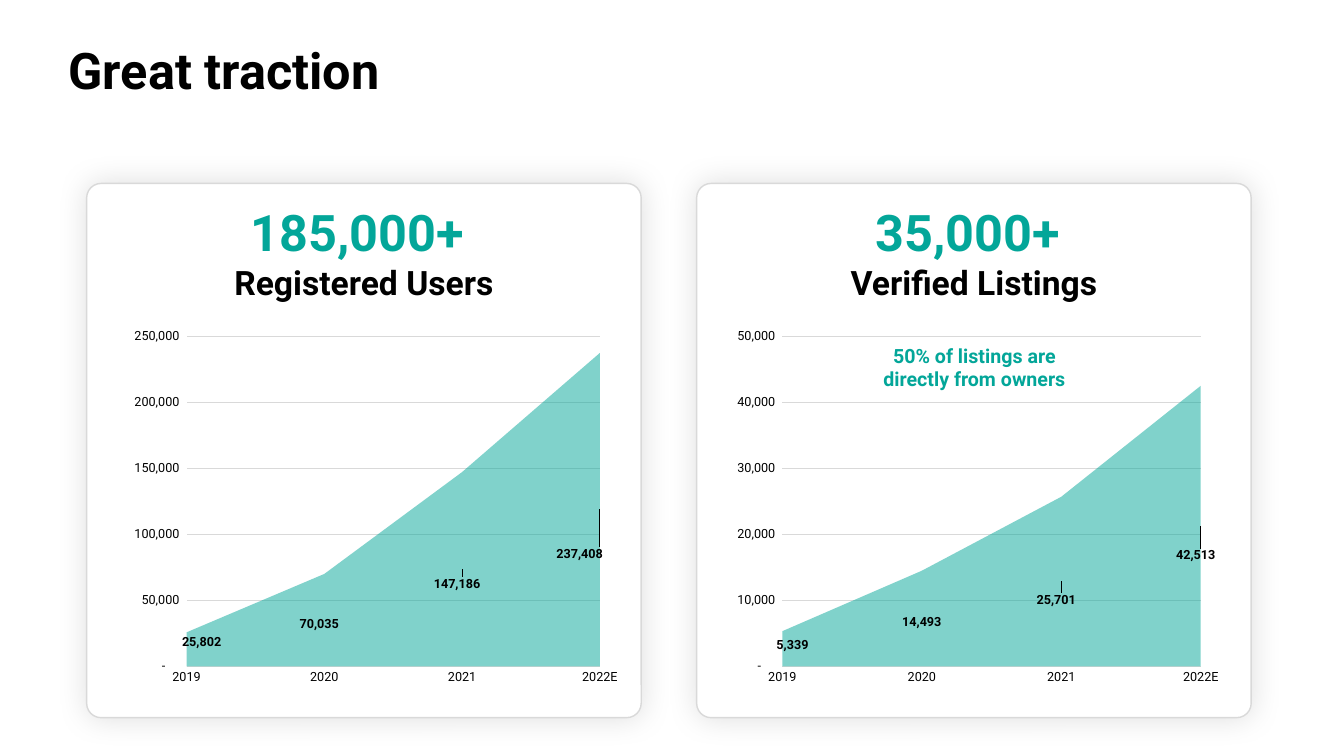
from lxml import etree
from pptx import Presentation
from pptx import util as u
from pptx.chart.data import CategoryChartData
from pptx.dml.color import RGBColor
from pptx.enum import chart as ch, shapes, text
from pptx.oxml import parse_xml
from pptx.oxml.ns import nsdecls, qn

FONT = "Roboto"
BLACK = RGBColor(0, 0, 0)
WHITE = RGBColor(255, 255, 255)
GREY = RGBColor(0xD9, 0xD9, 0xD9)
TEAL = RGBColor(0x03, 0xA6, 0x99)
COUNT = '_(* #,##0_);_(* \\(#,##0\\);_(* "-"??_);_('
YEARS = ("2019", "2020", "2021", "2022E")

# Two columns share one grid, in inches
LEFT, STEP, TOP = 0.86, 6.05, 1.82
CARD_W, CARD_H = 5.5, 5.3

# Per card: headline, label, values, axis top, axis step,
# plot left and width, label shifts (shares of the chart)
CARDS = (
    ("185,000+ ", "Registered Users", (25802, 70035, 147186, 237408),
     250000, 50000, 0.13, 0.82,
     ((0.03, -0.02), (-0.01, 0.01), (-0.01, 0.04), (-0.04, 0.12))),
    ("35,000+ ", "Verified Listings", (5339, 14493, 25701, 42513),
     50000, 10000, 0.12, 0.83,
     ((0.02, -0.01), (0, 0.01), (-0.01, 0.05), (-0.01, 0.08))),
)


def box(*sizes):
    return [u.Inches(n) for n in sizes]


def style(font, size, color=BLACK, bold=False):
    font.name, font.size, font.bold = FONT, u.Pt(size), bold
    font.color.rgb = color


def layout(x, y, w=None, h=None):
    """Chart layout: a plot area when sized, else a label shift."""
    parts = [("x", x), ("y", y)]
    if w:
        parts = [("layoutTarget", "inner"), ("xMode", "edge"),
                 ("yMode", "edge")] + parts + [("w", w), ("h", h)]
    inner = "".join(f'<c:{tag} val="{val}"/>' for tag, val in parts)
    return parse_xml(f'<c:layout {nsdecls("c")}><c:manualLayout>{inner}'
                     '</c:manualLayout></c:layout>')


def add_title(slide, words):
    title = slide.shapes.title
    title.left, title.top, title.width, title.height = box(0.58, 0.28, 12.2, 1.45)
    frame = title.text_frame
    frame.text = words
    frame.auto_size = text.MSO_AUTO_SIZE.NONE
    frame.vertical_anchor = text.MSO_ANCHOR.MIDDLE
    frame.margin_bottom = u.Inches(0.6)
    para = frame.paragraphs[0]
    para.alignment = text.PP_ALIGN.LEFT
    para.line_spacing = 0.9
    style(para.runs[0].font, 36, bold=True)


def add_card(slide, x):
    card = slide.shapes.add_shape(shapes.MSO_SHAPE.ROUNDED_RECTANGLE,
                                  *box(x, TOP, CARD_W, CARD_H))
    card.adjustments[0] = 0.027
    card.fill.solid()
    card.fill.fore_color.rgb = WHITE
    card.line.color.rgb = GREY
    card.line.width = u.Pt(1)
    # Soft glow all round
    card.shadow.inherit = False
    glow = card._element.spPr.find(qn("a:effectLst"))
    glow.append(parse_xml(
        f'<a:outerShdw {nsdecls("a")} blurRad="{u.Pt(22)}" dist="0" '
        'algn="ctr" rotWithShape="0"><a:srgbClr val="000000">'
        '<a:alpha val="13000"/></a:srgbClr></a:outerShdw>'))


def add_text(slide, place, lines):
    frame = slide.shapes.add_textbox(*box(*place)).text_frame
    frame.word_wrap = True
    frame.text = "\n".join(line[0] for line in lines)
    for para, (_, size, color) in zip(frame.paragraphs, lines):
        para.alignment = text.PP_ALIGN.CENTER
        style(para.runs[0].font, size, color, True)


def set_axes(chart, peak, step):
    years, count = chart.category_axis, chart.value_axis
    for axis in (years, count):
        axis.major_tick_mark = axis.minor_tick_mark = ch.XL_TICK_MARK.NONE
        style(axis.tick_labels.font, 9)
    years.has_major_gridlines = False
    count.has_major_gridlines = True
    for line in (years.format.line, count.major_gridlines.format.line):
        line.color.rgb = GREY
        line.width = u.Pt(0.75)
    count.format.line.fill.background()
    count.minimum_scale, count.maximum_scale = 0, peak
    count.major_unit = step
    count.tick_labels.number_format = COUNT
    count.tick_labels.number_format_is_linked = False
    # Areas run from edge to edge
    count._element.find(qn("c:crossBetween")).set("val", "midCat")


def add_area(slide, x, values, peak, step, left, width, shifts):
    data = CategoryChartData(number_format=COUNT)
    data.categories = YEARS
    data.add_series("Series 1", values)
    chart = slide.shapes.add_chart(ch.XL_CHART_TYPE.AREA,
                                   *box(x, 3.19, 5, 3.68), data).chart
    chart.has_legend = chart.has_title = False
    style(chart.font, 10)
    set_axes(chart, peak, step)
    plot = chart.plots[0]
    plot.vary_by_categories = False
    area = chart._chartSpace.chart.plotArea
    for old in area.findall(qn("c:layout")):
        area.remove(old)
    area.insert(0, layout(left, 0.04, width, 0.89))

    # Half-transparent fill
    series = plot.series[0]
    series.format.fill.solid()
    series.format.fill.fore_color.rgb = TEAL
    tint = series._element.find(".//" + qn("a:srgbClr"))
    etree.SubElement(tint, qn("a:alpha")).set("val", "50000")

    # Value labels, each moved off its point
    labels = series.data_labels
    labels.show_value = True
    labels.number_format = COUNT
    labels.number_format_is_linked = False
    style(labels.font, 9, bold=True)
    for i, shift in enumerate(shifts):
        style(series.points[i].data_label.font, 9, bold=True)
    for mark, shift in zip(series._element.iter(qn("c:dLbl")), shifts):
        mark.find(qn("c:idx")).addnext(layout(*shift))


def main():
    deck = Presentation()
    deck.slide_width, deck.slide_height = box(13.33, 7.5)
    slide = deck.slides.add_slide(deck.slide_layouts[5])
    add_title(slide, "Great traction")
    for col, (total, label, *graph) in enumerate(CARDS):
        x = LEFT + col * STEP
        add_card(slide, x)
        add_text(slide, (x + 0.87, 1.95, 3.76, 1.11),
                 ((total, 36, TEAL), (label, 24, BLACK)))
        add_area(slide, 1.2 + col * 5.96, *graph)
    # Note over the second chart
    add_text(slide, (8.51, 3.36, 2.31, 0.81),
             (("50% of listings are directly from owners", 14, TEAL),))
    deck.save("out.pptx")


if __name__ == "__main__":
    main()
